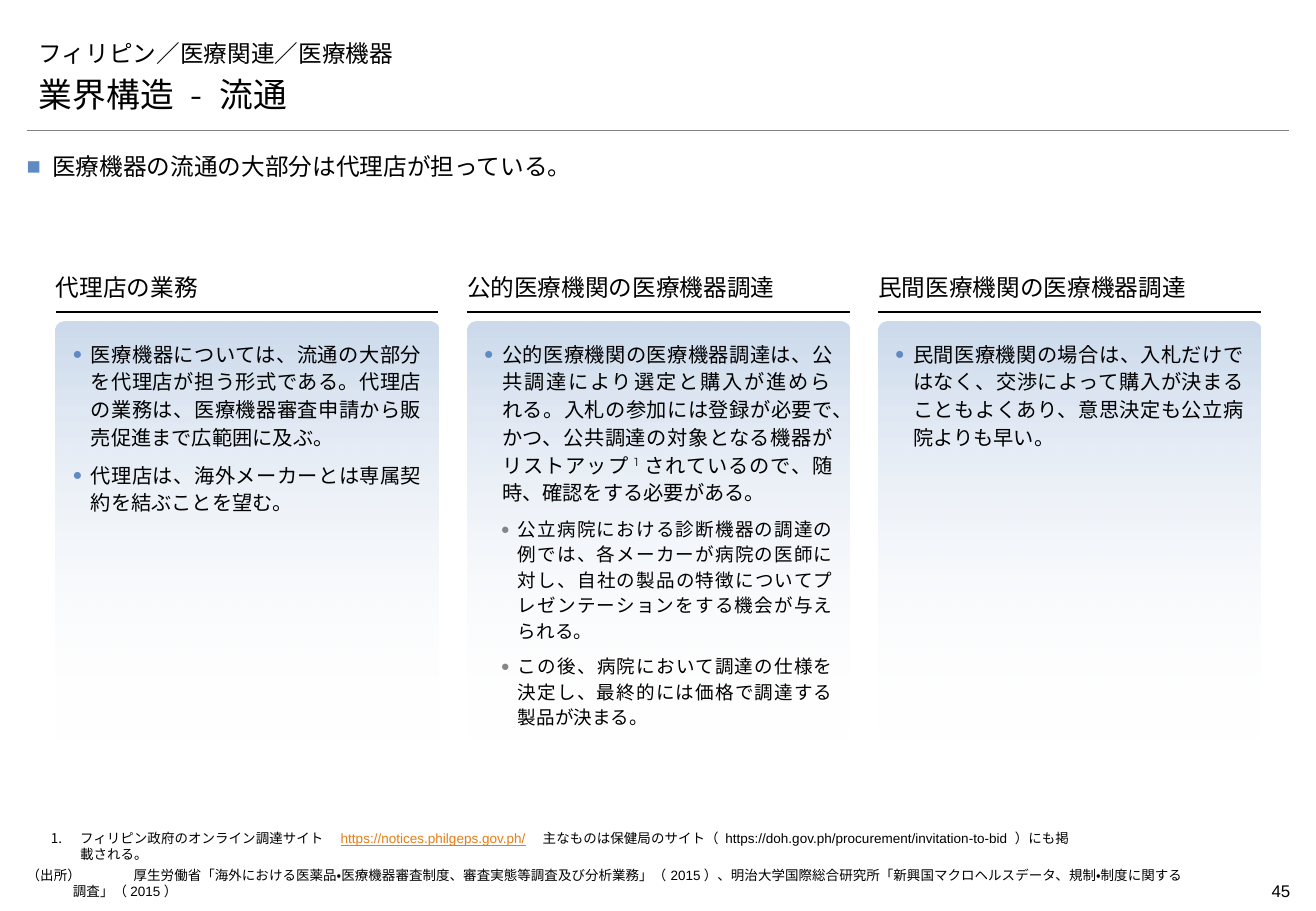
from lxml import etree
from pptx import Presentation
from pptx.dml.color import RGBColor
from pptx.enum.lang import MSO_LANGUAGE_ID
from pptx.enum.shapes import MSO_CONNECTOR, MSO_SHAPE
from pptx.enum.text import MSO_ANCHOR, PP_ALIGN
from pptx.oxml.ns import qn
from pptx.util import Pt

JAPANESE = MSO_LANGUAGE_ID.JAPANESE
STRAIGHT, ROUNDED = MSO_CONNECTOR.STRAIGHT, MSO_SHAPE.ROUNDED_RECTANGLE
TOP, BOTTOM = MSO_ANCHOR.TOP, MSO_ANCHOR.BOTTOM
LEFT, RIGHT, JUSTIFY = PP_ALIGN.LEFT, PP_ALIGN.RIGHT, PP_ALIGN.JUSTIFY

BLACK = RGBColor(0x00, 0x00, 0x00)
WHITE = RGBColor(0xFF, 0xFF, 0xFF)
GRAY = RGBColor(0x7F, 0x7F, 0x7F)
BULLET_GRAY = RGBColor(0x86, 0x86, 0x86)
BLUE = RGBColor(0x5F, 0x8A, 0xC3)
PALE_BLUE = RGBColor(0xCC, 0xDA, 0xEC)
ORANGE = RGBColor(0xE5, 0x7E, 0x17)
BODY_FONT, HEAD_FONT = "Arial", "Montserrat"

# Content
TOPIC = "フィリピン／医療関連／医療機器"
TITLE = "業界構造 - 流通"
MESSAGE = "医療機器の流通の大部分は代理店が担っている。"
# Each column: heading, then (level, pieces of text); a piece is (text, style)
COLUMNS = [
    ("代理店の業務", [
        (0, [("医療機器については、流通の大部分を代理店が担う形式である。代理店の業務は、"
              "医療機器審査申請から販売促進まで広範囲に及ぶ。", "")]),
        (0, [("代理店は、海外メーカーとは専属契約を結ぶことを望む。", "")]),
    ]),
    ("公的医療機関の医療機器調達", [
        (0, [("公的医療機関の医療機器調達は、公共調達により選定と購入が進めら", ""),
             ("", "break"),
             ("れる。入札の参加には登録が必要で、かつ、公共調達の対象となる機器がリストアップ", ""),
             ("1", "super"),
             ("されているので、随時、確認をする必要がある。", "")]),
        (1, [("公立病院における診断機器の調達の例では、各メーカーが病院の医師に対し、"
              "自社の製品の特徴についてプレゼンテーションをする機会が与えられる。", "")]),
        (1, [("この後、病院において調達の仕様を決定し、最終的には価格で調達する製品が決まる。", "")]),
    ]),
    ("民間医療機関の医療機器調達", [
        (0, [("民間医療機関の場合は、入札だけではなく、交渉によって購入が決まることもよくあり、"
              "意思決定も公立病院よりも早い。", "")]),
    ]),
]
NOTE = [
    ("フィリピン政府のオンライン調達サイト\u3000".replace("\u3000", "　"), ""),
    ("https://notices.philgeps.gov.ph/", "web"),
    ("　主なものは保健局のサイト（ https://doh.gov.ph/procurement/invitation-to-bid ）にも掲載される。", ""),
]
NOTE[0] = ("フィリピン政府のオンライン調達サイト　", "")
SOURCE = ("（出所）\t厚生労働省「海外における医薬品・医療機器審査制度、審査実態等調査及び分析業務」（2015）、"
          "明治大学国際総合研究所「新興国マクロヘルスデータ、規制・制度に関する調査」（2015）")
PAGE_NUMBER = "45"

# Layout in points
PAGE_WIDTH, PAGE_HEIGHT = 780, 540
MARGIN, CONTENT_WIDTH = 15.84, 748
COLUMN_LEFT, COLUMN_WIDTH, COLUMN_PITCH = 33.1, 226.8, 243.7
HEADING_TOP, HEADING_HEIGHT, RULE_Y = 162, 22.3, 185
PANEL_TOP, PANEL_HEIGHT = 190.8, 249.1
# Level: text size, left indent, hanging indent, bullet colour
LEVELS = [(12, 10.8, 10.8, BLUE), (11, 20.2, 10.1, BULLET_GRAY)]

deck = Presentation()
deck.slide_width, deck.slide_height = Pt(PAGE_WIDTH), Pt(PAGE_HEIGHT)
page = deck.slides.add_slide(deck.slide_layouts[6])


def set_frame(shape, insets, anchor):
    frame = shape.text_frame
    frame.word_wrap = True
    frame.vertical_anchor = anchor
    (frame.margin_left, frame.margin_top,
     frame.margin_right, frame.margin_bottom) = map(Pt, insets)
    return frame


def add_box(left, top, width, height, insets=(0, 0, 0, 0), anchor=TOP):
    box = page.shapes.add_textbox(Pt(left), Pt(top), Pt(width), Pt(height))
    return set_frame(box, insets, anchor).paragraphs[0]


def set_indent(para, left, hanging):
    properties = para._p.get_or_add_pPr()
    properties.set("marL", str(Pt(left)))
    properties.set("indent", str(-Pt(hanging)))
    return properties


def set_bullet(para, left, hanging, symbol, color, percent=100):
    properties = set_indent(para, left, hanging)
    color_node = etree.SubElement(properties, qn("a:buClr"))
    etree.SubElement(color_node, qn("a:srgbClr"), val=str(color))
    etree.SubElement(properties, qn("a:buSzPct"), val=str(percent * 1000))
    etree.SubElement(properties, qn("a:buFont"), typeface=BODY_FONT)
    etree.SubElement(properties, qn("a:buChar"), char=symbol)


def write(para, pieces, size, font=BODY_FONT, align=LEFT):
    para.alignment = align
    para.font.size, para.font.name = Pt(size), font
    para.font.color.rgb = BLACK
    for text, style in pieces:
        if style == "break":
            para.add_line_break()
            continue
        span = para.add_run()
        span.text = text
        span.font.language_id = JAPANESE
        if style == "super":
            span.font.name = HEAD_FONT
            span._r.get_or_add_rPr().set("baseline", "30000")
        elif style == "web":
            span.font.color.rgb = ORANGE
            span.font.underline = True


def add_rule(left, width, y, color, weight):
    rule = page.shapes.add_connector(STRAIGHT, Pt(left), Pt(y), Pt(left + width), Pt(y))
    rule.line.color.rgb, rule.line.width = color, Pt(weight)
    etree.SubElement(rule._element.spPr, qn("a:effectLst"))


def add_panel(left):
    panel = page.shapes.add_shape(ROUNDED, Pt(left), Pt(PANEL_TOP),
                                  Pt(COLUMN_WIDTH), Pt(PANEL_HEIGHT))
    panel.adjustments[0] = 0.02
    panel.shadow.inherit = False
    panel.line.fill.background()
    panel.fill.gradient()
    panel.fill.gradient_angle = 270
    for stop, color in zip(panel.fill.gradient_stops, (PALE_BLUE, WHITE)):
        stop.color.rgb = color
    # The lower end fades out completely
    last_color = panel._element.spPr.findall(".//" + qn("a:srgbClr"))[-1]
    etree.SubElement(last_color, qn("a:alpha"), val="0")
    return set_frame(panel, (8.64, 8.64, 8.64, 0), TOP)


# Header
add_rule(MARGIN, CONTENT_WIDTH, 77, GRAY, 0.25)
for text, top, size in ((TOPIC, 15.1, 14), (TITLE, 43.2, 20)):
    para = add_box(MARGIN, top, CONTENT_WIDTH, 28.1, (7.2, 3.6, 7.2, 3.6), BOTTOM)
    write(para, [(text, "")], size, HEAD_FONT)

# Key message
para = add_box(MARGIN, 88.6, CONTENT_WIDTH, 17.3)
set_bullet(para, 15.1, 15.1, "■", BLUE)
para.line_spacing = 1.1
write(para, [(MESSAGE, "")], 14, align=JUSTIFY)

# Three columns
for index, (heading, points) in enumerate(COLUMNS):
    left = COLUMN_LEFT + index * COLUMN_PITCH
    add_rule(left, COLUMN_WIDTH, RULE_Y, BLACK, 0.75)
    para = add_box(left, HEADING_TOP, COLUMN_WIDTH, HEADING_HEIGHT, (0, 3.6, 0, 5.8), BOTTOM)
    write(para, [(heading, "")], 14, HEAD_FONT)
    frame = add_panel(left)
    for order, (level, pieces) in enumerate(points):
        para = frame.add_paragraph() if order else frame.paragraphs[0]
        size, indent, hanging, color = LEVELS[level]
        para.level = level
        set_bullet(para, indent, hanging, "●", color, 80)
        para.line_spacing, para.space_after = 1.14, Pt(6)
        write(para, pieces, size, align=JUSTIFY)

# Footnote, source and page number
para = add_box(30.2, 492, 609.8, 19.2, anchor=BOTTOM)
etree.SubElement(set_indent(para, 17.3, 17.3), qn("a:buAutoNum"), type="arabicPeriod")
write(para, NOTE, 8)
para = add_box(MARGIN, 514.1, 692, 19.2)
set_indent(para, 27.4, 27.4)
write(para, [(SOURCE, "")], 8)
para = add_box(707.8, 518.4, 56.9, 19.4, (0, 3.6, 0, 3.6))
write(para, [(PAGE_NUMBER, "")], 10, align=RIGHT)

deck.save("out.pptx")
